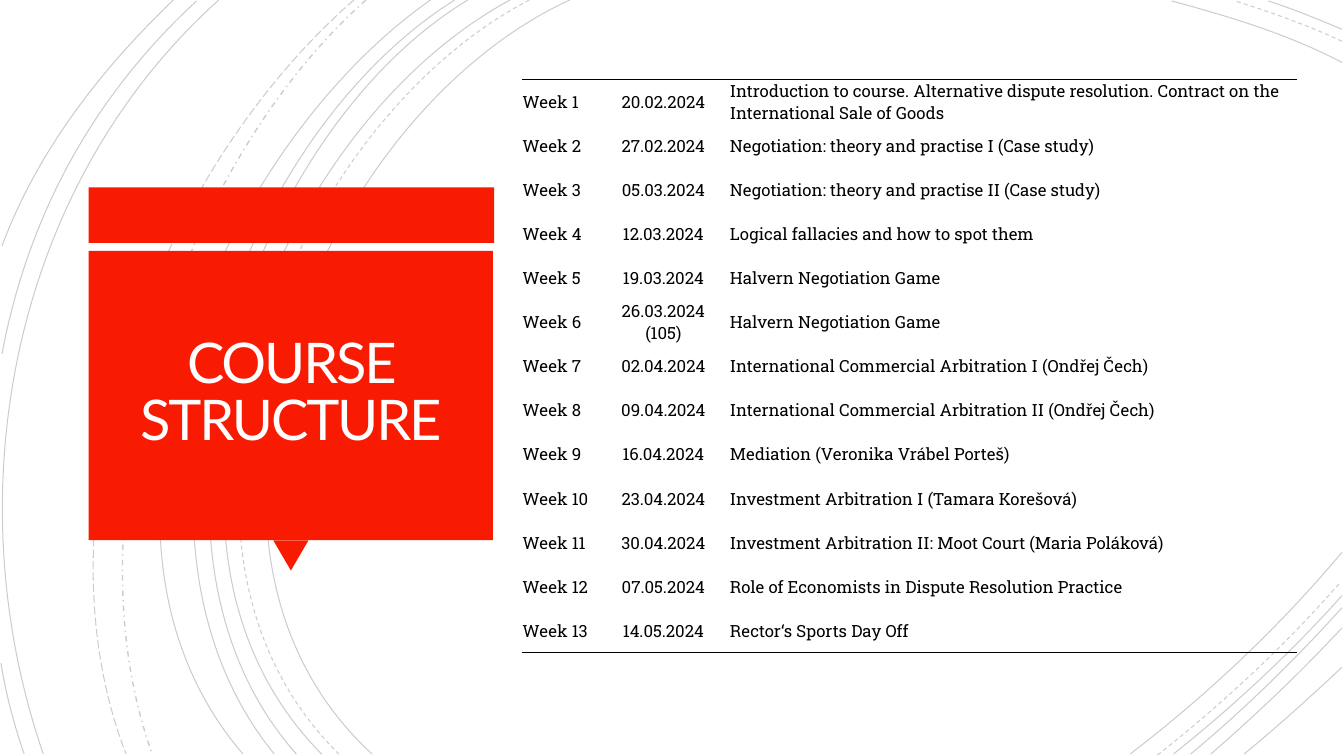
from lxml.etree import SubElement
from pptx import Presentation
from pptx.dml.color import RGBColor
from pptx.enum.dml import MSO_LINE as Dash
from pptx.enum.shapes import MSO_SHAPE as Shape
from pptx.enum.text import MSO_ANCHOR as Anchor, PP_ALIGN as Align
from pptx.oxml.ns import qn
from pptx.util import Pt

PX = 9144  # EMU per px, 100 px to the inch
RED, WHITE, BLACK = "F81B02", "FFFEFF", "000000"
NO_TABLE_STYLE = "{2D5ABB26-0587-4C30-8999-92F81FD0307C}"

# Each arc: start, two control points, end
SOLID_ARCS = [
    [(565, 0), (315, 115), (143, 540), (369, 748)],
    [(506, 0), (270, 127), (110, 537), (319, 748)],
    [(464, 0), (244, 133), (110, 541), (294, 748)],
    [(451, 0), (231, 138), (97, 533), (272, 748)],
    [(427, 0), (217, 147), (53, 529), (241, 748)],
    [(217, 0), (11, 185), (-46, 490), (43, 748)],
    [(195, 1), (92, 96), (28, 214), (2, 351)],
    [(172, 0), (100, 69), (37, 150), (2, 244)],
    [(1, 658), (6, 689), (14, 719), (24, 748)],
    [(1331, 62), (1278, 34), (1218, 16), (1162, 1)],
    [(1331, 29), (1307, 19), (1283, 9), (1258, 1)],
    [(1121, 748), (1197, 690), (1269, 622), (1331, 548)],
    [(1164, 748), (1223, 701), (1280, 648), (1331, 591)],
    [(1181, 748), (1234, 704), (1284, 655), (1331, 603)],
    [(1201, 748), (1246, 709), (1290, 667), (1331, 623)],
    [(1234, 748), (1267, 721), (1299, 692), (1331, 662)],
]
DASHED_ARCS = [
    [(525, 0), (285, 125), (123, 537), (336, 748)],
    [(1331, 41), (1297, 25), (1260, 12), (1225, 1)],
    [(1148, 749), (1213, 698), (1275, 640), (1330, 577)],
]
DASH_DOT_ARC = [(363, 0), (176, 166), (65, 509), (151, 748)]
LONG_DASH_ARC = [(351, 0), (157, 169), (29, 499), (125, 748)]

COURSE = [
    ("20.02.2024", "Introduction to course. Alternative dispute resolution. "
                   "Contract on the International Sale of Goods"),
    ("27.02.2024", "Negotiation: theory and practise I (Case study)"),
    ("05.03.2024", "Negotiation: theory and practise II (Case study)"),
    ("12.03.2024", "Logical fallacies and how to spot them"),
    ("19.03.2024", "Halvern Negotiation Game"),
    ("26.03.2024\n(105)", "Halvern Negotiation Game"),
    ("02.04.2024", "International Commercial Arbitration I (Ondřej Čech)"),
    ("09.04.2024", "International Commercial Arbitration II (Ondřej Čech)"),
    ("16.04.2024", "Mediation (Veronika Vrábel Porteš)"),
    ("23.04.2024", "Investment Arbitration I (Tamara Korešová)"),
    ("30.04.2024", "Investment Arbitration II: Moot Court (Maria Poláková)"),
    ("07.05.2024", "Role of Economists in Dispute Resolution Practice"),
    ("14.05.2024", "Rector‘s Sports Day Off"),
]
WHITE_WEEK = 10


def rgb(color):
    return RGBColor.from_string(color)


class Deck:
    title_font, body_font = "Lato", "Roboto Slab"

    def __init__(self, width, height):
        self.prs = Presentation()
        self.prs.slide_width, self.prs.slide_height = width * PX, height * PX
        self.slide = self.prs.slides.add_slide(self.prs.slide_layouts[6])
        self.shapes = self.slide.shapes

    def arc(self, points, dash=Dash.SOLID, weight=0.75):
        """Draw one faint cubic curve through its four control points."""
        start, *rest = points
        builder = self.shapes.build_freeform(*start, scale=PX)
        builder.add_line_segments(rest, close=False)
        sp = builder.convert_to_shape()
        segments = sp._element.xpath(".//a:lnTo")
        outline = segments[0].getparent()
        curve = SubElement(outline, qn("a:cubicBezTo"))
        for segment in segments:
            curve.append(segment[0])
            outline.remove(segment)
        sp.shadow.inherit = False
        sp.fill.background()
        sp.line.width = Pt(weight)
        sp.line.dash_style = dash
        sp.line.color.rgb = rgb(BLACK)
        color = sp._element.xpath("./p:spPr/a:ln/a:solidFill/a:srgbClr")[0]
        SubElement(color, qn("a:alpha"), val="20000")

    def block(self, kind, x, y, w, h, rotation=0):
        sp = self.shapes.add_shape(kind, x * PX, y * PX, w * PX, h * PX)
        sp.shadow.inherit = False
        sp.fill.solid()
        sp.fill.fore_color.rgb = rgb(RED)
        sp.line.fill.background()
        sp.rotation = rotation

    def run(self, p, text, font, size, color):
        r = p.add_run()
        r.text = text
        r.font.name, r.font.size = font, Pt(size)
        r.font.color.rgb = rgb(color)
        return r

    def title(self, text, x, y, w, h, inset):
        tf = self.shapes.add_textbox(x * PX, y * PX, w * PX, h * PX).text_frame
        tf.word_wrap = True
        tf.vertical_anchor = Anchor.MIDDLE
        tf.margin_left = tf.margin_right = inset * PX
        tf.margin_top = tf.margin_bottom = inset * PX
        p = tf.paragraphs[0]
        p.alignment, p.line_spacing = Align.CENTER, 0.85
        r = self.run(p, text, self.title_font, 40, WHITE)
        r.font._element.set("spc", "-150")

    def cell(self, cell, text, align, fill=None):
        cell.margin_left = cell.margin_right = 0
        cell.margin_top = cell.margin_bottom = 0
        cell.vertical_anchor = Anchor.MIDDLE
        if fill:
            cell.fill.solid()
            cell.fill.fore_color.rgb = rgb(fill)
        else:
            cell.fill.background()
        p = cell.text_frame.paragraphs[0]
        p.alignment = align
        for i, line in enumerate(text.split("\n")):
            if i:
                p.add_line_break()
            self.run(p, line, self.body_font, 12, BLACK)

    def border(self, cell, side):
        """Rule one side of a cell; side is lnT or lnB."""
        props = cell._tc.get_or_add_tcPr()
        ln = props.makeelement(qn(f"a:{side}"), {"w": str(Pt(1))})
        fill = SubElement(ln, qn("a:solidFill"))
        SubElement(fill, qn("a:srgbClr"), val=BLACK)
        props.insert(0, ln)

    def schedule(self, rows, x, y, widths, height):
        frame = self.shapes.add_table(len(rows), len(widths), x * PX, y * PX,
                                      sum(widths) * PX, height * PX)
        table = frame.table
        table.first_row = table.horz_banding = False
        table._tbl.tblPr.find(qn("a:tableStyleId")).text = NO_TABLE_STYLE
        for column, width in zip(table.columns, widths):
            column.width = width * PX
        aligns = (Align.LEFT, Align.CENTER, Align.LEFT)
        for week, (date, topic) in enumerate(rows, 1):
            fill = "FFFFFF" if week == WHITE_WEEK else None
            texts = (f"Week {week}", date, topic)
            for col, (text, align) in enumerate(zip(texts, aligns)):
                self.cell(table.cell(week - 1, col), text, align, fill)
        for col in range(len(widths)):
            self.border(table.cell(0, col), "lnT")
            self.border(table.cell(len(rows) - 1, col), "lnB")


def main():
    deck = Deck(1333, 750)
    for points in SOLID_ARCS:
        deck.arc(points)
    for points in DASHED_ARCS:
        deck.arc(points, Dash.DASH)
    deck.arc(DASH_DOT_ARC, Dash.DASH_DOT, 1)
    deck.arc(LONG_DASH_ARC, Dash.LONG_DASH)
    deck.block(Shape.RECTANGLE, 88, 186, 402, 55)
    deck.block(Shape.ISOSCELES_TRIANGLE, 271, 536, 35, 30, rotation=180)
    deck.block(Shape.RECTANGLE, 88, 249, 401, 287)
    deck.title("COURSE STRUCTURE", 97, 257, 383, 269, inset=25)
    deck.schedule(COURSE, 518, 79, (74, 132, 562), 569)
    deck.prs.save("out.pptx")


if __name__ == "__main__":
    main()
